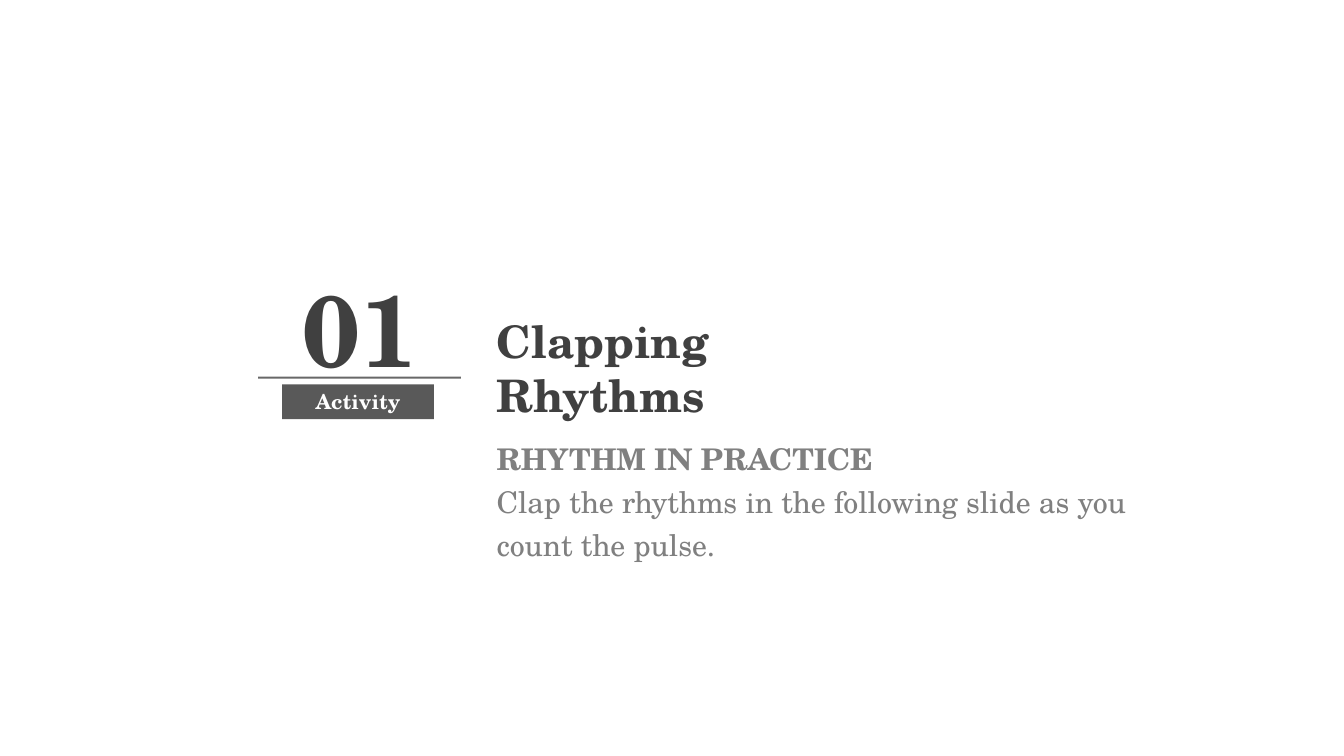
from pptx import Presentation
from pptx.dml.color import RGBColor
from pptx.enum.shapes import MSO_CONNECTOR, MSO_SHAPE
from pptx.enum.text import MSO_ANCHOR, MSO_AUTO_SIZE, PP_ALIGN
from pptx.oxml.ns import qn
from pptx.util import Inches, Pt
from lxml.etree import SubElement

FONT = "TeX Gyre Schola"
DARK = RGBColor(0x40, 0x40, 0x40)
SLATE = RGBColor(0x59, 0x59, 0x59)
GREY = RGBColor(0x80, 0x80, 0x80)
WHITE = RGBColor(0xFF, 0xFF, 0xFF)
INSET = Inches(0.15) // 2


def write(shape, lines, size, color, align=PP_ALIGN.LEFT, anchor=MSO_ANCHOR.TOP, space=1.0):
    """Fill a shape with (text, bold) paragraphs."""
    frame = shape.text_frame
    frame.word_wrap = True
    frame.auto_size = MSO_AUTO_SIZE.SHAPE_TO_FIT_TEXT
    frame.vertical_anchor = anchor
    frame.margin_left = frame.margin_right = INSET
    frame.margin_top = frame.margin_bottom = INSET // 2
    frame.text = "\n".join(text for text, bold in lines)
    for para, (text, bold) in zip(frame.paragraphs, lines):
        para.alignment = align
        para.line_spacing = space
        para.space_before = Pt(0)
        font = para.font
        font.name, font.size, font.bold = FONT, Pt(size), bold
        font.color.rgb = color


# Widescreen 16:9 page
deck = Presentation()
deck.slide_width = Inches(10)
deck.slide_height = deck.slide_width * 9 // 16
slide = deck.slides.add_slide(deck.slide_layouts[5])
shapes = slide.shapes

# Title
title = shapes.title
title.left, title.top = Inches(3.62), Inches(2.3)
title.width, title.height = Inches(2.28), Inches(0.88)
write(title, [("Clapping Rhythms", True)], 24, DARK)

# Rule between number and label
rule = shapes.add_connector(MSO_CONNECTOR.STRAIGHT, Inches(1.92), Inches(2.81),
                            Inches(3.43), Inches(2.81))
rule.line.width = Pt(1)
rule.line.color.rgb = DARK
tint = next(rule.line._ln.iter(qn("a:srgbClr")))
SubElement(tint, qn("a:alpha")).set("val", "78000")
SubElement(rule._element.spPr, qn("a:effectLst"))

# Activity number
number = shapes.add_textbox(Inches(2.1), Inches(1.95), Inches(1.16), Inches(0.98))
write(number, [("01", True)], 54, DARK, PP_ALIGN.CENTER)

# Activity label
label = shapes.add_shape(MSO_SHAPE.RECTANGLE, Inches(2.1), Inches(2.86),
                         Inches(1.13), Inches(0.26))
label.shadow.inherit = False
label.fill.solid()
label.fill.fore_color.rgb = SLATE
label.line.fill.background()
write(label, [("Activity", True)], 11, WHITE, PP_ALIGN.CENTER, MSO_ANCHOR.MIDDLE)

# Instructions
body = shapes.add_textbox(Inches(3.62), Inches(3.19), Inches(5.06), Inches(1.04))
write(body, [
    ("RHYTHM IN PRACTICE", True),
    ("Clap the rhythms in the following slide as you count the pulse.", False),
], 16, GREY, space=1.2)

deck.save("out.pptx")
